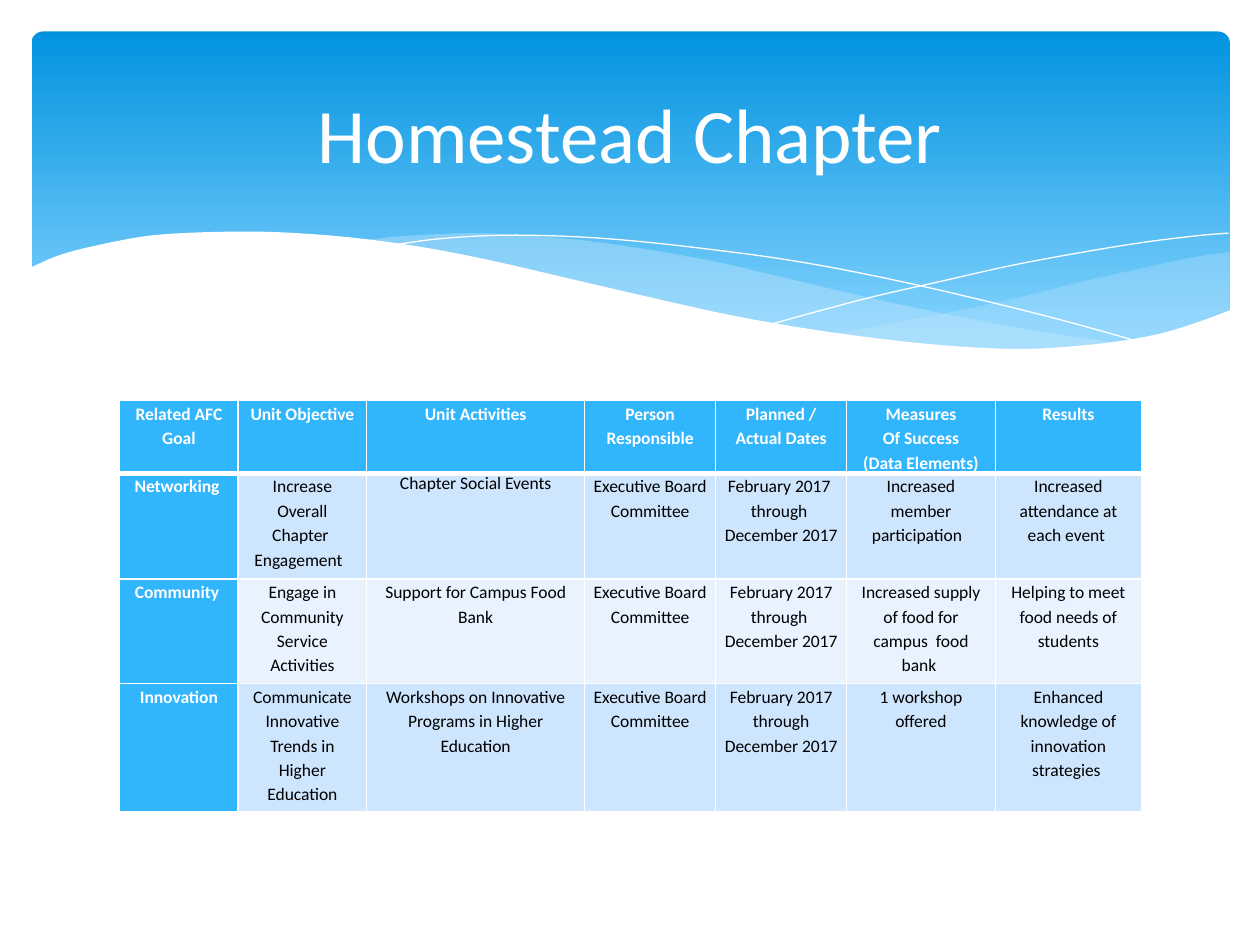
from dataclasses import dataclass

from lxml import etree
from pptx import Presentation
from pptx.dml.color import RGBColor
from pptx.enum.shapes import MSO_SHAPE
from pptx.enum.text import MSO_ANCHOR, PP_ALIGN
from pptx.oxml.ns import qn
from pptx.util import Inches, Pt

ROUNDED = MSO_SHAPE.ROUNDED_RECTANGLE
CENTER = PP_ALIGN.CENTER
MIDDLE = MSO_ANCHOR.MIDDLE


@dataclass(frozen=True)
class Theme:
    font: str = "Calibri"
    title_size: int = 44
    table_size: int = 10
    white: str = "FFFFFF"
    black: str = "000000"
    banner_top: str = "0293E0"
    banner_bottom: str = "83D3FE"
    wave: str = "C6E7FC"
    accent: str = "31B6FD"
    bands: tuple = ("CEE5FE", "E8F3FF")


THEME = Theme()

RIGHT_WAVE = [
    [(9.76, 2), (9.48, 2.04), (9.06, 2.13), (8.61, 2.23), (8.05, 2.37),
     (7.53, 2.48), (7.06, 2.57), (6.61, 2.65)],
    [(6.61, 2.65), (7.05, 2.71), (7.45, 2.75), (7.81, 2.77), (8.14, 2.78),
     (8.54, 2.76), (8.89, 2.72), (9.21, 2.65), (9.49, 2.57), (9.76, 2.47)],
]
MIDDLE_WAVE = [
    [(8.93, 2.73), (8.37, 2.65), (7.75, 2.54), (7.06, 2.4), (6.29, 2.22),
     (5.69, 2.08), (5.14, 1.98), (4.65, 1.91), (4.2, 1.87), (3.8, 1.85),
     (3.44, 1.86), (3.13, 1.88), (2.86, 1.91)],
    [(2.86, 1.91), (3.42, 1.99), (4.04, 2.11), (4.49, 2.22), (5.3, 2.4),
     (6.01, 2.55), (6.65, 2.66), (7.22, 2.74), (7.73, 2.77), (8.18, 2.78),
     (8.57, 2.77), (8.93, 2.73)],
]
FALLING_LINE = [
    [(3.09, 1.95), (3.44, 1.9), (3.87, 1.87), (4.33, 1.87), (4.89, 1.9),
     (5.56, 1.97), (6.36, 2.08), (7.27, 2.26), (8.31, 2.51), (9.07, 2.72)],
]
RISING_LINE = [
    [(6.13, 2.57), (6.53, 2.46), (6.95, 2.35), (7.48, 2.23), (8.06, 2.1),
     (8.66, 1.99), (9.1, 1.92), (9.51, 1.87), (9.75, 1.85)],
]
PAGE_EDGE = [
    [(9.77, 2.46), (9.5, 2.56), (9.2, 2.65), (8.87, 2.71), (8.5, 2.75),
     (8.09, 2.77), (7.61, 2.75), (7.08, 2.7), (6.48, 2.62), (5.79, 2.5),
     (5.03, 2.33), (4.47, 2.2), (3.91, 2.07), (3.4, 1.97), (2.92, 1.9),
     (2.5, 1.86), (2.11, 1.84), (1.77, 1.84), (1.46, 1.85), (1.19, 1.87),
     (0.95, 1.91), (0.76, 1.95), (0.59, 1.99), (0.46, 2.03), (0.36, 2.07),
     (0.23, 2.13)],
    [(0.23, 3.29), (9.77, 3.29)],
]

COLUMN_WIDTHS = (0.94, 1.02, 1.73, 1.04, 1.04, 1.18, 1.16)
ROW_HEIGHTS = (0.56, 0.84, 0.83, 1.02)
BOARD = "Executive Board Committee"
HEADER = ("Related AFC Goal", "Unit Objective", "Unit Activities",
          "Person\nResponsible", "Planned / Actual Dates",
          "Measures\nOf Success\n(Data Elements)", "Results")
GOALS = [
    ("Networking ", "Increase\nOverall\nChapter \nEngagement  ",
     "Chapter Social Events", BOARD,
     "February 2017 \nthrough \nDecember 2017 ",
     "Increased member participation  ",
     "Increased attendance at each event "),
    ("Community ", "Engage in Community Service Activities",
     "Support for Campus Food Bank", BOARD,
     "February 2017 through \nDecember 2017",
     "Increased supply of food for campus  food bank ",
     "Helping to meet food needs of students"),
    ("Innovation", "Communicate Innovative Trends in Higher Education",
     "Workshops on Innovative Programs in Higher Education", BOARD,
     "February 2017 through\nDecember 2017 ",
     "1 workshop offered", "Enhanced knowledge of innovation strategies "),
]


def rgb(code):
    return RGBColor.from_string(code)


def apply(target, values):
    for name, value in values.items():
        setattr(target, name, value)


def smooth(knots, steps=4):
    """Return points of a Catmull-Rom curve through the knots."""
    padded = [knots[0], *knots, knots[-1]]
    curve = [knots[0]]
    for a, b, c, d in zip(padded, padded[1:], padded[2:], padded[3:]):
        for step in range(1, steps + 1):
            t = step / steps
            curve.append(tuple(
                (2 * q + (r - p) * t + (2 * p - 5 * q + 4 * r - s) * t**2
                 + (3 * q - p - 3 * r + s) * t**3) / 2
                for p, q, r, s in zip(a, b, c, d)))
    return curve


def add_curve(slide, edges, closed):
    points = [(Inches(x), Inches(y))
              for edge in edges for x, y in smooth(edge)]
    builder = slide.shapes.build_freeform(*points[0])
    builder.add_line_segments(points[1:], close=closed)
    curve = builder.convert_to_shape()
    curve.shadow.inherit = False
    return curve


def add_wave(slide, edges, color, opacity=100):
    wave = add_curve(slide, edges, True)
    wave.fill.solid()
    wave.fill.fore_color.rgb = rgb(color)
    wave.line.fill.background()
    if opacity < 100:
        tint = wave.fill._xPr.find(".//" + qn("a:srgbClr"))
        etree.SubElement(tint, qn("a:alpha"), val=str(opacity * 1000))


def add_hairline(slide, edges):
    hairline = add_curve(slide, edges, False)
    hairline.fill.background()
    hairline.line.color.rgb = rgb(THEME.white)
    hairline.line.width = Pt(0)


def add_banner(slide):
    banner = slide.shapes.add_shape(
        ROUNDED, Inches(0.25), Inches(0.25), Inches(9.51), Inches(2.7))
    banner.adjustments[0] = 0.034
    banner.shadow.inherit = False
    banner.line.fill.background()
    banner.fill.gradient()
    banner.fill.gradient_angle = 270
    colors = ((0, THEME.banner_top), (0.9, THEME.banner_bottom))
    for stop, (position, color) in zip(banner.fill.gradient_stops, colors):
        stop.position = position
        stop.color.rgb = rgb(color)


def write(frame, text, size, color, bold=False, spacing=None):
    frame.text = text
    for paragraph in frame.paragraphs:
        apply(paragraph, {"alignment": CENTER, "line_spacing": spacing})
        apply(paragraph.font,
              {"name": THEME.font, "size": Pt(size), "bold": bold})
        paragraph.font.color.rgb = rgb(color)


def add_title(slide, text):
    title = slide.shapes.add_textbox(
        Inches(0.5), Inches(0.37), Inches(9), Inches(1.37))
    apply(title.text_frame, {"word_wrap": True, "vertical_anchor": MIDDLE})
    write(title.text_frame, text, THEME.title_size, THEME.white)


def set_borders(cell, widths):
    properties = cell._tc.get_or_add_tcPr()
    for side, width in widths.items():
        border = etree.SubElement(
            properties, qn("a:ln" + side), w=str(Pt(width)))
        paint = etree.SubElement(border, qn("a:solidFill"))
        etree.SubElement(paint, qn("a:srgbClr"), val=THEME.white)


def add_goal_table(slide):
    rows = [HEADER, *GOALS]
    table = slide.shapes.add_table(
        len(rows), len(HEADER), Inches(0.95), Inches(3.18),
        Inches(8.1), Inches(3.25)).table
    apply(table, {"first_row": False, "horz_banding": False})
    for column, width in zip(table.columns, COLUMN_WIDTHS):
        column.width = Inches(width)
    for r, (row, height) in enumerate(zip(rows, ROW_HEIGHTS)):
        table.rows[r].height = Inches(height)
        for c, text in enumerate(row):
            cell = table.cell(r, c)
            apply(cell, {"margin_left": Inches(0.07), "margin_top": 0,
                         "margin_right": Inches(0.07), "margin_bottom": 0})
            set_borders(cell, {"L": 1, "R": 1, "T": 3 if r == 1 else 1,
                               "B": 3 if r == 0 else 1})
            heading = r == 0 or c == 0
            cell.fill.solid()
            cell.fill.fore_color.rgb = rgb(
                THEME.accent if heading else THEME.bands[(r - 1) % 2])
            spacing = None if (r, c) == (1, 2) else 1.15
            write(cell.text_frame, text, THEME.table_size,
                  THEME.white if heading else THEME.black, heading, spacing)


def main():
    deck = Presentation()
    apply(deck, {"slide_width": Inches(10), "slide_height": Inches(7.5)})
    slide = deck.slides.add_slide(deck.slide_layouts[6])
    add_banner(slide)
    add_wave(slide, RIGHT_WAVE, THEME.wave, 29)
    add_wave(slide, MIDDLE_WAVE, THEME.wave, 40)
    add_hairline(slide, FALLING_LINE)
    add_hairline(slide, RISING_LINE)
    add_wave(slide, PAGE_EDGE, THEME.white)
    add_title(slide, "Homestead Chapter")
    add_goal_table(slide)
    deck.save("out.pptx")


if __name__ == "__main__":
    main()
